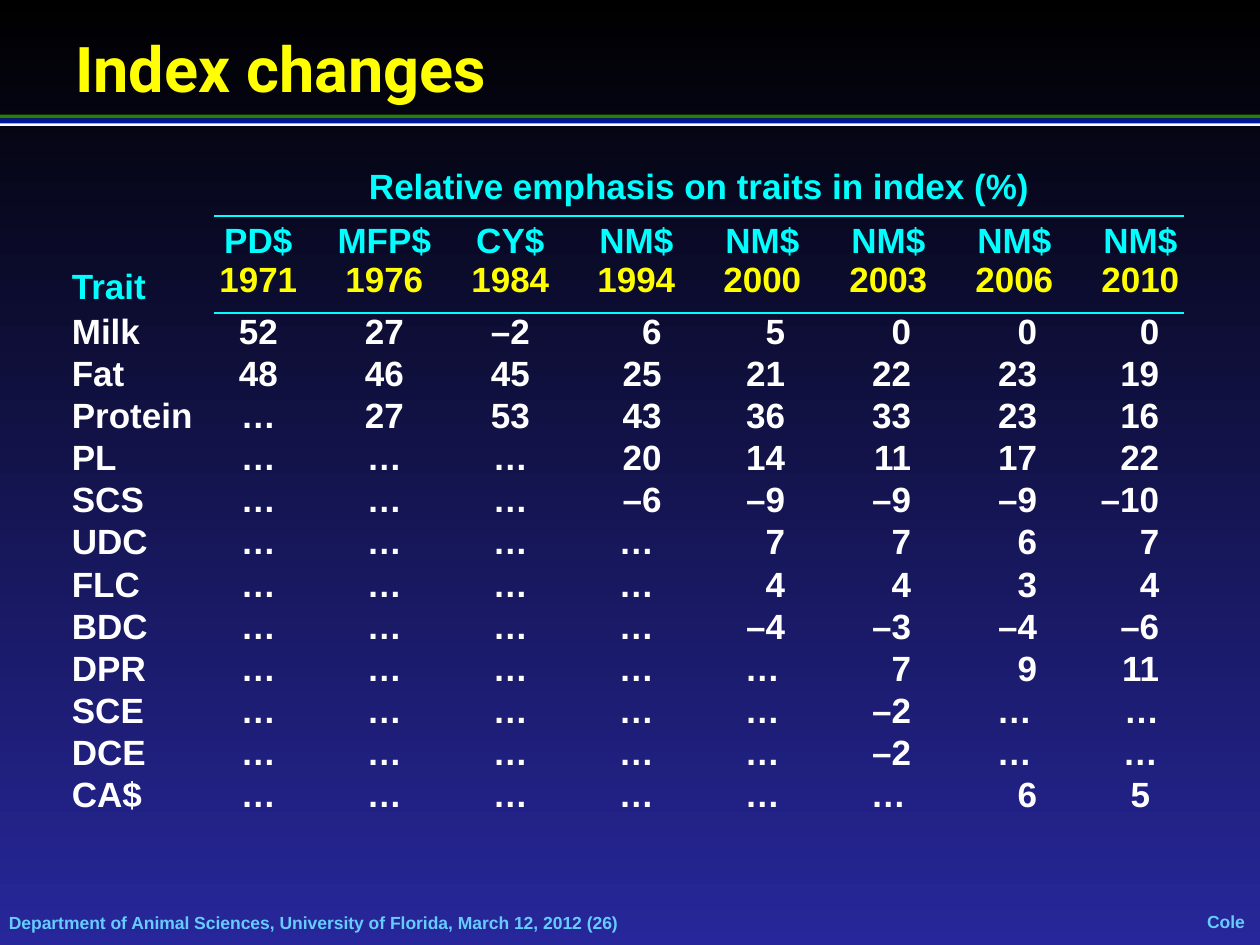
from dataclasses import dataclass
from typing import Optional

from lxml.etree import SubElement
from pptx import Presentation
from pptx.dml.color import RGBColor
from pptx.enum.shapes import MSO_SHAPE
from pptx.enum.text import MSO_ANCHOR, PP_ALIGN
from pptx.oxml import parse_xml
from pptx.oxml.ns import qn
from pptx.util import Inches, Pt


@dataclass(frozen=True)
class Theme:
    body_font: str = "Arial"
    title_font: str = "Roboto"
    title_size: int = 36
    table_size: int = 20
    footer_size: int = 10
    yellow: str = "FFFF00"
    cyan: str = "00FFFF"
    white: str = "FFFFFF"
    footer: str = "66CCFF"
    green: str = "2A7E00"
    blue: str = "001799"
    sky_top: str = "000000"
    sky_bottom: str = "27279B"


@dataclass(frozen=True)
class IndexColumn:
    index: str
    year: str
    width: float
    number_inset: Optional[float] = None
    centred_inset: float = 0


@dataclass(frozen=True)
class Stripe:
    top: float
    height: float
    color: str


@dataclass(frozen=True)
class Caption:
    text: str
    left: float
    top: float
    width: float
    height: float
    font: str
    size: int
    color: str
    margins: tuple = (0, 0, 0, 0)
    align: PP_ALIGN = PP_ALIGN.LEFT
    wrap: bool = True
    space_before: float = 0


THEME = Theme()
NO_STYLE = "{2D5ABB26-0587-4C30-8999-92F81FD0307C}"
NO_WEIGHT = "…"
TRAIT_WIDTH = 1.13
TITLE_ROW, INDEX_ROW, TRAIT_ROW = 0.38, 0.77, 1 / 3

COLUMNS = [
    IndexColumn("PD$", "1971", 0.7),
    IndexColumn("MFP$", "1976", 1.3),
    IndexColumn("CY$", "1984", 0.7),
    IndexColumn("NM$", "1994", 1.3, 0.45),
    IndexColumn("NM$", "2000", 0.7, 0.17),
    IndexColumn("NM$", "2003", 1.3, 0.47),
    IndexColumn("NM$", "2006", 1.0, 0.47, 0.3),
    IndexColumn("NM$", "2010", 0.7, 0.2),
]
WEIGHTS = {
    "Milk": "52 27 –2 6 5 0 0 0",
    "Fat": "48 46 45 25 21 22 23 19",
    "Protein": "… 27 53 43 36 33 23 16",
    "PL": "… … … 20 14 11 17 22",
    "SCS": "… … … –6 –9 –9 –9 –10",
    "UDC": "… … … … 7 7 6 7",
    "FLC": "… … … … 4 4 3 4",
    "BDC": "… … … … –4 –3 –4 –6",
    "DPR": "… … … … … 7 9 11",
    "SCE": "… … … … … –2 … …",
    "DCE": "… … … … … –2 … …",
    "CA$": "… … … … … … 6 5",
}
RIGHT_ALIGNED_EXCEPTIONS = {("SCE", "2010"): True, ("CA$", "2010"): False}
STRIPES = [
    Stripe(0.91, 0.03, THEME.green),
    Stripe(0.97, 0.03, THEME.white),
    Stripe(0.94, 0.04, THEME.blue),
]
CAPTIONS = [
    Caption("Department of Animal Sciences, University of Florida, March 12, 2012 (26)",
            0.07, 7.24, 8.09, 0.17, THEME.body_font, THEME.footer_size, THEME.footer,
            space_before=6.2),
    Caption("Cole", 9.58, 7.23, 0.3, 0.17, THEME.body_font, THEME.footer_size,
            THEME.footer, align=PP_ALIGN.CENTER, wrap=False, space_before=6.2),
    Caption("Index changes", 0.5, 0.2, 9, 0.67, THEME.title_font, THEME.title_size,
            THEME.yellow, margins=(0.1, 0.05, 0.1, 0.05)),
]


def style_paragraph(paragraph, font: str, size: int, color: str, align: PP_ALIGN) -> None:
    paragraph.alignment = align
    for run in paragraph.runs:
        run.font.name = font
        run.font.size = Pt(size)
        run.font.bold = True
        run.font.color.rgb = RGBColor.from_string(color)


def set_margins(holder, margins: tuple) -> None:
    (holder.margin_left, holder.margin_top,
     holder.margin_right, holder.margin_bottom) = map(Inches, margins)


def paint_background(slide) -> None:
    fill = slide.background.fill
    fill.gradient()
    fill.gradient_angle = 270
    ends = ((0, THEME.sky_top), (1, THEME.sky_bottom))
    for stop, (position, color) in zip(fill.gradient_stops, ends):
        stop.position = position
        stop.color.rgb = RGBColor.from_string(color)


def draw_stripes(slide, stripes: list[Stripe]) -> None:
    band = slide.shapes.add_group_shape()
    for stripe in stripes:
        bar = band.shapes.add_shape(MSO_SHAPE.RECTANGLE, 0, Inches(stripe.top),
                                    Inches(10), Inches(stripe.height))
        bar.shadow.inherit = False
        bar.fill.solid()
        bar.fill.fore_color.rgb = RGBColor.from_string(stripe.color)
        bar.line.fill.background()


def draw_caption(slide, caption: Caption) -> None:
    frame = slide.shapes.add_textbox(Inches(caption.left), Inches(caption.top),
                                     Inches(caption.width), Inches(caption.height)).text_frame
    frame.word_wrap = caption.wrap
    frame.vertical_anchor = MSO_ANCHOR.MIDDLE
    set_margins(frame, caption.margins)
    frame.text = caption.text
    paragraph = frame.paragraphs[0]
    paragraph.space_before = Pt(caption.space_before)
    style_paragraph(paragraph, caption.font, caption.size, caption.color, caption.align)


def fill_cell(cell, lines: list[tuple[str, str]], margins: tuple,
              align: PP_ALIGN = PP_ALIGN.LEFT) -> None:
    set_margins(cell, margins)
    cell.text_frame.text = "\n".join(text for text, _ in lines)
    for paragraph, (_, color) in zip(cell.text_frame.paragraphs, lines):
        style_paragraph(paragraph, THEME.body_font, THEME.table_size, color, align)


def add_rule(cell, side: str) -> None:
    edge = parse_xml(f'<a:{side} xmlns:a="http://schemas.openxmlformats.org/drawingml/2006/main"'
                     f' w="{Pt(1.5)}"/>')
    SubElement(SubElement(edge, qn("a:solidFill")), qn("a:srgbClr")).set("val", THEME.cyan)
    cell._tc.get_or_add_tcPr().insert(0, edge)


def draw_weights(slide) -> None:
    widths = [TRAIT_WIDTH] + [column.width for column in COLUMNS]
    heights = [TITLE_ROW, INDEX_ROW] + [TRAIT_ROW] * len(WEIGHTS)
    frame = slide.shapes.add_table(len(heights), len(widths), Inches(0.57), Inches(1.33),
                                   Inches(sum(widths)), Inches(sum(heights)))
    table = frame.table
    table.first_row = table.horz_banding = False
    next(frame._element.iter(qn("a:tableStyleId"))).text = NO_STYLE
    for grid_column, width in zip(table.columns, widths):
        grid_column.width = Inches(width)
    for grid_row, height in zip(table.rows, heights):
        grid_row.height = Inches(height)
    for cell in table.iter_cells():
        cell.fill.background()

    trait_heading, emphasis = table.cell(0, 0), table.cell(0, 1)
    trait_heading.merge(table.cell(1, 0))
    emphasis.merge(table.cell(0, len(COLUMNS)))
    trait_heading.vertical_anchor = MSO_ANCHOR.BOTTOM
    fill_cell(trait_heading, [("Trait", THEME.cyan)], (0, 0, 0, 0.05))
    fill_cell(emphasis, [("Relative emphasis on traits in index (%)", THEME.cyan)],
              (0, 0, 0, 0.05), PP_ALIGN.CENTER)

    for position, column in enumerate(COLUMNS, 1):
        heading = table.cell(1, position)
        fill_cell(heading, [(column.index, THEME.cyan), (column.year, THEME.yellow)],
                  (0, 0.05, column.centred_inset, 0.05), PP_ALIGN.CENTER)
        add_rule(table.cell(0, position), "lnB")
        add_rule(heading, "lnT")

    for row, (trait, weights) in enumerate(WEIGHTS.items(), 2):
        fill_cell(table.cell(row, 0), [(trait, THEME.white)], (0, 0, 0, 0))
        for position, (column, weight) in enumerate(zip(COLUMNS, weights.split()), 1):
            is_number = column.number_inset is not None and weight != NO_WEIGHT
            to_right = RIGHT_ALIGNED_EXCEPTIONS.get((trait, column.year), is_number)
            inset = column.number_inset if to_right else column.centred_inset
            fill_cell(table.cell(row, position), [(weight, THEME.white)], (0, 0, inset, 0),
                      PP_ALIGN.RIGHT if to_right else PP_ALIGN.CENTER)


def main() -> None:
    deck = Presentation()
    deck.slide_width, deck.slide_height = Inches(10), Inches(7.5)
    slide = deck.slides.add_slide(deck.slide_layouts[6])
    paint_background(slide)
    *footers, title = CAPTIONS
    for footer in footers:
        draw_caption(slide, footer)
    draw_stripes(slide, STRIPES)
    draw_weights(slide)
    draw_caption(slide, title)
    deck.save("out.pptx")


if __name__ == "__main__":
    main()
